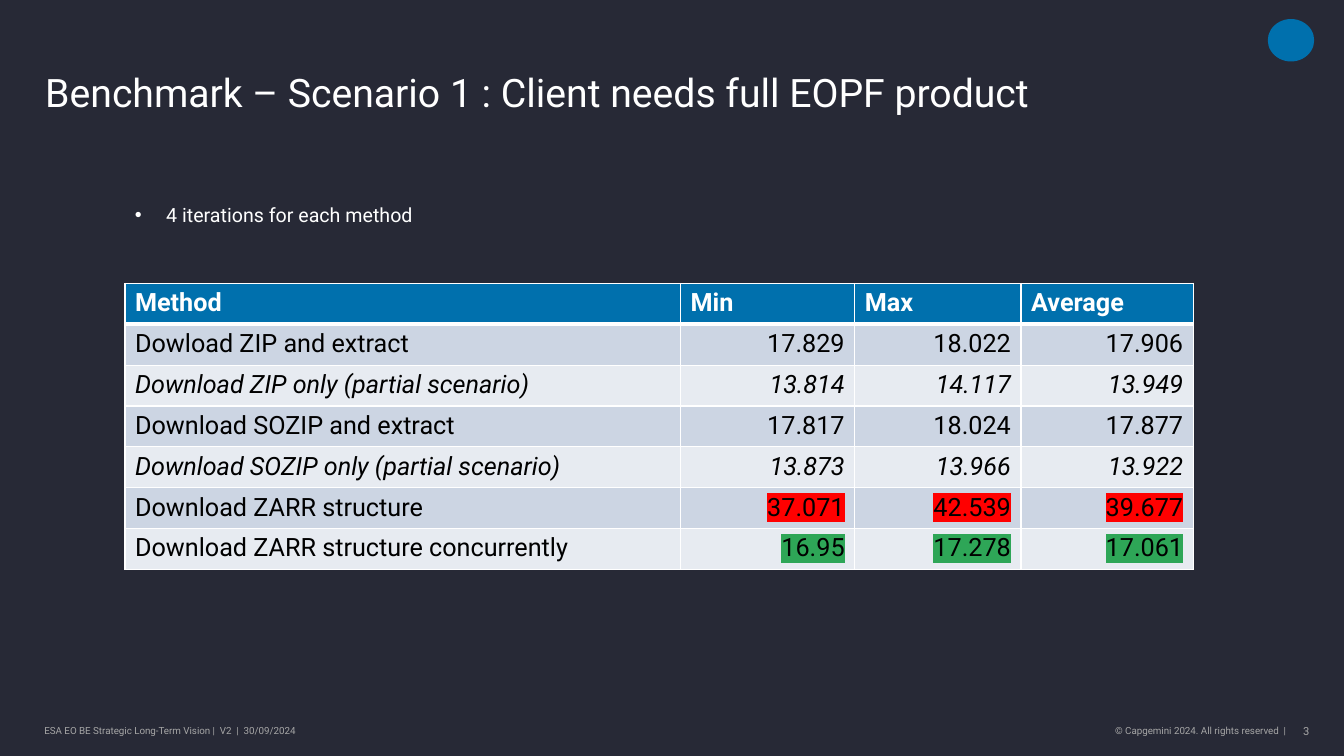
from pptx import Presentation
from pptx.dml.color import RGBColor
from pptx.enum.shapes import MSO_SHAPE
from pptx.enum.text import MSO_ANCHOR, PP_ALIGN
from pptx.oxml import parse_xml
from pptx.oxml.ns import nsdecls
from pptx.util import Cm, Pt

WHITE, BLACK, GREY, BLUE = "FFFFFF", "000000", "A6A6A6", "0070AD"
RED, GREEN = "FF0000", "2EA657"


def rgb(value):
    return RGBColor.from_string(value)


def write(tf, text, size, color, align=PP_ALIGN.LEFT, bold=False, italic=False):
    tf.text = text
    p = tf.paragraphs[0]
    p.alignment = align
    font = p.runs[0].font
    font.name, font.size = "Roboto", Pt(size)
    font.bold, font.italic = bold, italic
    font.color.rgb = rgb(color)
    return p


prs = Presentation()
prs.slide_width, prs.slide_height = Cm(33.87), Cm(19.05)
s = prs.slides.add_slide(prs.slide_layouts[5])
s.background.fill.solid()
s.background.fill.fore_color.rgb = rgb("272936")

# Title
title = s.shapes.title
title.left, title.top, title.width, title.height = Cm(1.14), Cm(0.71), Cm(30.58), Cm(2.21)
tf = title.text_frame
tf.margin_left = tf.margin_right = tf.margin_top = tf.margin_bottom = 0
tf.vertical_anchor = MSO_ANCHOR.BOTTOM
tf.word_wrap = True
p = write(tf, "Benchmark – Scenario 1 : Client needs full EOPF product", 28, WHITE)
p.line_spacing = 0.9

# Plain mark in the top right corner
sp = s.shapes.add_shape(MSO_SHAPE.OVAL, Cm(31.95), Cm(0.48), Cm(1.17), Cm(1.07))
sp.shadow.inherit = False
sp.fill.solid()
sp.fill.fore_color.rgb = rgb(BLUE)
sp.line.fill.background()

# Footer: left, width, text, size, alignment
footers = [
    (1.12, 9.47, "ESA EO BE Strategic Long-Term Vision |  V2  |  30/09/2024", 7, PP_ALIGN.LEFT),
    (19.81, 12.6, "© Capgemini 2024. All rights reserved  |", 7, PP_ALIGN.RIGHT),
    (32.36, 0.64, "3", 8, PP_ALIGN.RIGHT),
]
for left, width, text, size, align in footers:
    tf = s.shapes.add_textbox(Cm(left), Cm(18.11), Cm(width), Cm(0.61)).text_frame
    tf.margin_left = tf.margin_right = tf.margin_top = tf.margin_bottom = 0
    tf.vertical_anchor = MSO_ANCHOR.MIDDLE
    tf.word_wrap = True
    write(tf, text, size, GREY, align)

# Bullet above the table
tf = s.shapes.add_textbox(Cm(3.15), Cm(4.98), Cm(7.75), Cm(0.86)).text_frame
tf.vertical_anchor = MSO_ANCHOR.MIDDLE
tf.word_wrap = False
p = write(tf, "4 iterations for each method", 14, WHITE)
pPr = p._p.get_or_add_pPr()
pPr.set("marL", str(Cm(0.79)))
pPr.set("indent", str(-Cm(0.79)))
pPr.append(parse_xml(f'<a:buFont {nsdecls("a")} typeface="Arial"/>'))
pPr.append(parse_xml(f'<a:buChar {nsdecls("a")} char="•"/>'))

# Benchmark table
rows = [
    ("Method", "Min", "Max", "Average"),
    ("Dowload ZIP and extract", "17.829", "18.022", "17.906"),
    ("Download ZIP only (partial scenario)", "13.814", "14.117", "13.949"),
    ("Download SOZIP and extract", "17.817", "18.024", "17.877"),
    ("Download SOZIP only (partial scenario)", "13.873", "13.966", "13.922"),
    ("Download ZARR structure", "37.071", "42.539", "39.677"),
    ("Download ZARR structure concurrently", "16.95", "17.278", "17.061"),
]
col_widths = [14, 4.39, 4.19, 4.34]
italic_rows = (2, 4)
highlights = {5: RED, 6: GREEN}

table = s.shapes.add_table(len(rows), len(col_widths), Cm(3.15), Cm(7.14),
                           Cm(sum(col_widths)), Cm(1.03 * len(rows))).table
for col, width in zip(table.columns, col_widths):
    col.width = Cm(width)

for i, row in enumerate(rows):
    table.rows[i].height = Cm(1.03)
    header = i == 0
    fill = BLUE if header else ("E7EBF1", "CCD5E3")[i % 2]
    for j, text in enumerate(row):
        cell = table.cell(i, j)
        number = j > 0 and not header
        p = write(cell.text_frame, text, 18, WHITE if header else BLACK,
                  PP_ALIGN.RIGHT if number else PP_ALIGN.LEFT,
                  bold=header, italic=i in italic_rows)

        # Text highlight on the slowest and fastest results
        if number and i in highlights:
            color = p.runs[0]._r.rPr.find("{*}solidFill")
            color.addnext(parse_xml(f'<a:highlight {nsdecls("a")}>'
                                    f'<a:srgbClr val="{highlights[i]}"/></a:highlight>'))

        # White borders, heavier under the header
        tcPr = cell._tc.get_or_add_tcPr()
        for side in "LRTB":
            weight = Pt(3 if header and side == "B" else 1)
            tcPr.append(parse_xml(f'<a:ln{side} {nsdecls("a")} w="{weight}"><a:solidFill>'
                                  f'<a:srgbClr val="{WHITE}"/></a:solidFill></a:ln{side}>'))
        cell.fill.solid()
        cell.fill.fore_color.rgb = rgb(fill)

prs.save("out.pptx")
